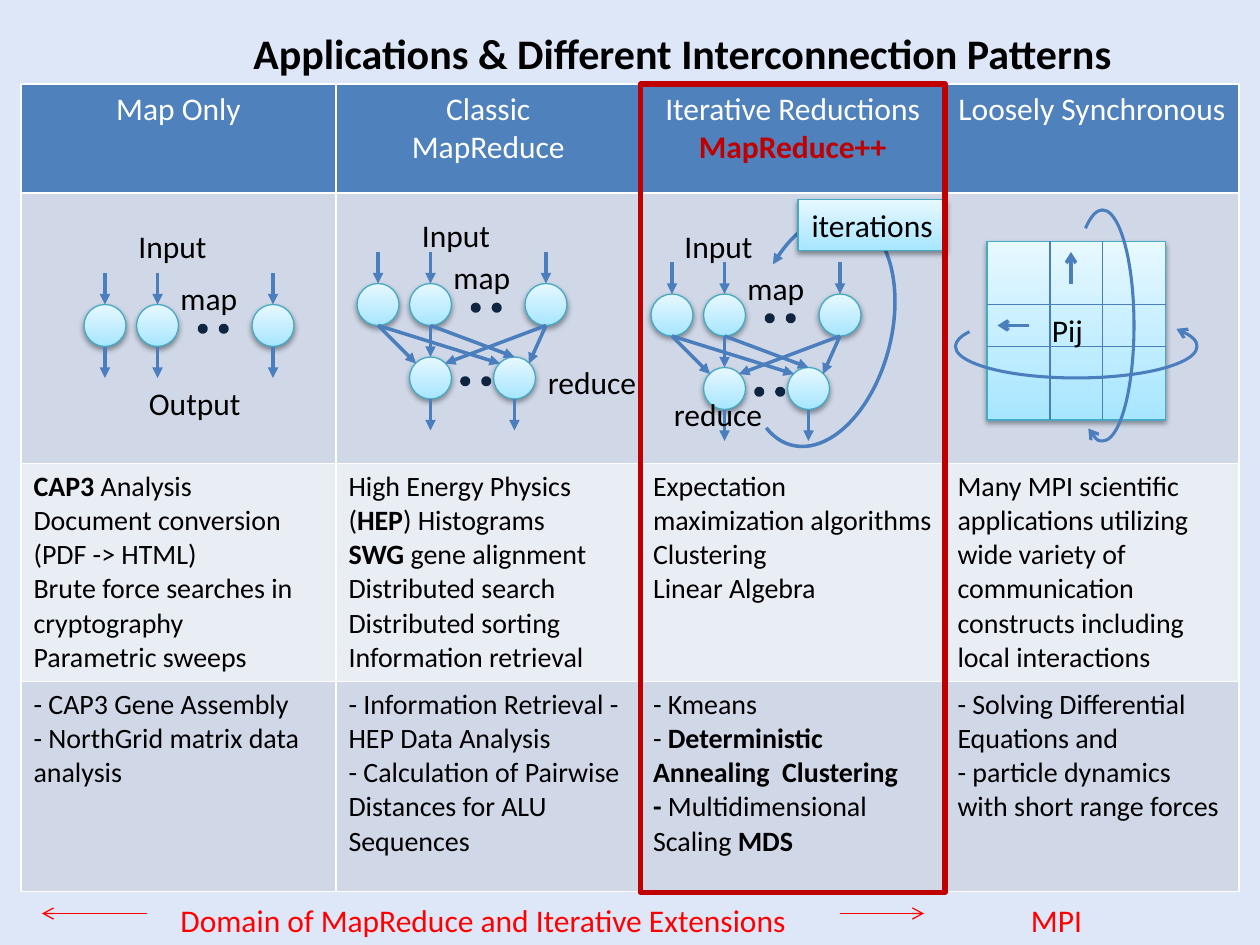
from dataclasses import dataclass
from typing import Any

from lxml import etree
from pptx import Presentation
from pptx.dml.color import RGBColor
from pptx.enum.shapes import MSO_CONNECTOR, MSO_SHAPE
from pptx.enum.text import MSO_ANCHOR, PP_ALIGN
from pptx.oxml.ns import qn
from pptx.util import Pt

PX = 9525  # EMU in one px, 96 px to the inch
ELLIPSE, RECT, ARC = MSO_SHAPE.OVAL, MSO_SHAPE.RECTANGLE, MSO_SHAPE.ARC
STRAIGHT = MSO_CONNECTOR.STRAIGHT
CENTER, MIDDLE = PP_ALIGN.CENTER, MSO_ANCHOR.MIDDLE
COLORS = {
    "background": "DEE7F8", "text": "000000", "header": "4F81BD", "header_text": "FFFFFF",
    "band": "D0D8E8", "band_light": "E9EDF4", "accent": "C00000", "domain": "FF0000",
    "arrow": "4B7EBC", "dot": "0F243E", "outline": "46AAC5",
    "glow_bottom": "A7E6FF", "glow_top": "E7F8FF",
}
LABEL_HEIGHT, NODE, DOT, ARROW = 39, 32, 5, 24
MAP_STEPS = (0, 40, 128)
REDUCE_STEPS = (40, 104)

COLUMN_WIDTHS = (240, 232, 232, 224)
ROW_HEIGHTS = (83, 206, 154, 160)
# Text between ** is bold; a leading bullet sign makes a dash bullet.
ROWS = (
    (["Map Only"], ["Classic", "MapReduce"],
     ["Iterative Reductions **MapReduce++**"], ["Loosely Synchronous"]),
    ([], [], [], []),
    (["**CAP3** Analysis", "Document conversion (PDF -> HTML)",
      "Brute force searches in cryptography", "Parametric sweeps"],
     ["High Energy Physics (**HEP**) Histograms", "**SWG** gene alignment",
      "Distributed search", "Distributed sorting", "Information retrieval"],
     ["Expectation maximization algorithms", "Clustering", "Linear Algebra"],
     ["Many MPI scientific applications utilizing wide variety of communication "
      "constructs including local interactions"]),
    (["- CAP3 Gene Assembly", "- NorthGrid matrix data analysis"],
     ["- Information Retrieval - HEP Data Analysis",
      "- Calculation of Pairwise Distances for ALU Sequences"],
     ["• Kmeans", "• **Deterministic Annealing  Clustering**",
      "**- **Multidimensional Scaling **MDS**"],
     ["- Solving Differential Equations and", "- particle dynamics with short range forces"]),
)
ROW_FILLS = ("header", "band", "band_light", "band")


@dataclass(frozen=True)
class Label:
    text: str
    left: int
    top: int
    width: int


@dataclass(frozen=True)
class MapDiagram:
    left: int
    top: int  # top of the map nodes
    labels: tuple[Label, ...]
    reduces: bool


@dataclass(frozen=True)
class Loop:
    box: tuple[int, int, int, int]
    angles: tuple[float, float]
    end: str
    head: str
    weight: float
    rotation: float = 0
    flipped: bool = False


MAP_ONLY = MapDiagram(64, 232, (Label("Input", 96, 168, 72), Label("map", 128, 208, 63),
                                Label("Output", 104, 288, 90)), False)
CLASSIC = MapDiagram(272, 216, (Label("Input", 312, 160, 72), Label("map", 336, 192, 63),
                                Label("reduce", 408, 272, 87)), True)
ITERATIVE = MapDiagram(496, 224, (Label("Input", 512, 168, 72), Label("map", 560, 200, 63),
                                  Label("reduce", 504, 296, 87)), True)
ITERATION_LOOP = Loop((572, 162, 107, 180), (131.85, 63.04), "headEnd", "triangle", 2, 14.3)
ROW_LOOP = Loop((728, 240, 184, 48), (103.27, 5.98), "tailEnd", "arrow", 1.75, 0, True)
COLUMN_LOOP = Loop((752, 224, 176, 48), (103.27, 5.98), "headEnd", "arrow", 1.75, 270, True)


def rgb(name: str) -> RGBColor:
    return RGBColor.from_string(COLORS[name])


def px(*lengths: int) -> list[int]:
    return [length * PX for length in lengths]


def style_run(run: Any, color: str = "text", size: int = 18, bold: bool = False) -> None:
    for key, value in {"name": "Calibri", "size": Pt(size), "bold": bold}.items():
        setattr(run.font, key, value)
    run.font.color.rgb = rgb(color)


def set_line(item: Any, color: str, weight: float) -> None:
    item.line.color.rgb = rgb(color)
    item.line.width = Pt(weight)


def add_head(item: Any, end: str, head: str) -> None:
    etree.SubElement(item._element.spPr.find(qn("a:ln")), qn(f"a:{end}"), type=head)


def write_label(box: Any, text: str, color: str = "text") -> None:
    box.text_frame.word_wrap = False
    run = box.text_frame.paragraphs[0].add_run()
    run.text = text
    style_run(run, color)


def add_label(shapes: Any, label: Label, color: str = "text") -> None:
    box = shapes.add_textbox(*px(label.left, label.top, label.width, LABEL_HEIGHT))
    write_label(box, label.text, color)


def add_line(shapes: Any, start: tuple[int, int], stop: tuple[int, int],
             head: str = "", color: str = "arrow", weight: float = 2) -> None:
    line = shapes.add_connector(STRAIGHT, *px(*start, *stop))
    set_line(line, color, weight)
    if head:
        add_head(line, "tailEnd", head)
    etree.SubElement(line._element.spPr, qn("a:effectLst"))


def add_glossy(shapes: Any, kind: Any, left: int, top: int, width: int, height: int) -> Any:
    """Add a light blue shape with a vertical gradient and a soft shadow."""
    shape = shapes.add_shape(kind, *px(left, top, width, height))
    shape.fill.gradient()
    shape.fill.gradient_angle = 90
    for stop, name, position in zip(shape.fill.gradient_stops, ("glow_bottom", "glow_top"), (0, 1)):
        stop.color.rgb = rgb(name)
        stop.position = position
    set_line(shape, "outline", 0.75)
    shape.shadow.inherit = False
    shadow = etree.SubElement(shape._element.spPr.find(qn("a:effectLst")), qn("a:outerShdw"),
                              blurRad="40000", dist="20000", dir="5400000", rotWithShape="0")
    tint = etree.SubElement(shadow, qn("a:srgbClr"), val=COLORS["text"])
    etree.SubElement(tint, qn("a:alpha"), val="38000")
    return shape


def add_dots(shapes: Any, left: int, top: int) -> None:
    for x in (left, left + 16):
        dot = shapes.add_shape(ELLIPSE, *px(x, top, DOT, DOT))
        dot.fill.solid()
        dot.fill.fore_color.rgb = rgb("dot")
        set_line(dot, "dot", 2)
        dot.shadow.inherit = False


def add_loop(shapes: Any, loop: Loop) -> None:
    arc = shapes.add_shape(ARC, *px(*loop.box))
    for index, angle in enumerate(loop.angles):
        arc.adjustments[index] = angle
    arc.rotation = loop.rotation
    if loop.flipped:
        arc._element.spPr.find(qn("a:xfrm")).set("flipV", "1")
    arc.fill.background()
    set_line(arc, "arrow", loop.weight)
    add_head(arc, loop.end, loop.head)
    arc.shadow.inherit = False


def add_map_diagram(slide: Any, diagram: MapDiagram) -> Any:
    shapes = slide.shapes.add_group_shape().shapes
    left, top = diagram.left, diagram.top
    bottom, reduce_top = top + NODE, top + 56

    def add_nodes(steps: tuple[int, ...], node_top: int) -> None:
        for step in steps:
            add_glossy(shapes, ELLIPSE, left + step, node_top, NODE, NODE)

    def add_arrows(steps: tuple[int, ...], y: int) -> None:
        for step in steps:
            x = left + step + NODE // 2
            add_line(shapes, (x, y), (x, y + ARROW), "triangle")

    add_nodes(MAP_STEPS, top)
    add_arrows(MAP_STEPS, top - ARROW)
    add_dots(shapes, left + 88, top + 16)
    if diagram.reduces:
        add_nodes(REDUCE_STEPS, reduce_top)
        for source, target, drop in ((0, 45, 29), (40, 56, 24), (128, 67, 29),
                                     (0, 109, 29), (40, 120, 24), (128, 131, 29)):
            add_line(shapes, (left + source + NODE // 2, bottom),
                     (left + target, bottom + drop), "triangle")
        add_arrows(REDUCE_STEPS, reduce_top + NODE)
        add_dots(shapes, left + 80, reduce_top + 16)
    else:
        add_arrows(MAP_STEPS, bottom)
    for label in diagram.labels:
        add_label(shapes, label)
    return shapes


def add_grid_diagram(slide: Any) -> None:
    shapes = slide.shapes.add_group_shape().shapes
    left, top, side = 752, 184, 136
    add_glossy(shapes, RECT, left, top, side, side)
    for x in (800, 840):
        add_line(shapes, (x, top), (x, top + side), weight=0.75)
    for y in (232, 264):
        add_line(shapes, (left, y), (left + side, y), weight=0.75)
    add_label(shapes, Label("Pij", 792, 232, 43))
    add_line(shapes, (816, 216), (816, 192), "arrow")
    add_line(shapes, (784, 248), (760, 248), "arrow")
    add_loop(shapes, ROW_LOOP)
    add_loop(shapes, COLUMN_LOOP)


def write_paragraph(paragraph: Any, markup: str, header: bool) -> None:
    if header:
        paragraph.alignment = CENTER
    if markup.startswith("•"):
        markup = markup[1:]
        properties = paragraph._p.get_or_add_pPr()
        etree.SubElement(properties, qn("a:buFont"), typeface="Calibri")
        etree.SubElement(properties, qn("a:buChar"), char="-")
    for index, part in enumerate(markup.split("**")):
        if part:
            run = paragraph.add_run()
            run.text = part
            bold = index % 2 == 1
            color = ("accent" if bold else "header_text") if header else "text"
            style_run(run, color, 18 if header else 16, bold)


def add_pattern_table(slide: Any) -> None:
    frame = slide.shapes.add_table(len(ROWS), len(COLUMN_WIDTHS),
                                   *px(16, 64, sum(COLUMN_WIDTHS), sum(ROW_HEIGHTS)))
    table = frame.table
    for column, width in zip(table.columns, COLUMN_WIDTHS):
        column.width = width * PX
    for r, (row, height) in enumerate(zip(table.rows, ROW_HEIGHTS)):
        row.height = height * PX
        for cell, lines in zip(row.cells, ROWS[r]):
            cell.fill.solid()
            cell.fill.fore_color.rgb = rgb(ROW_FILLS[r])
            text = cell.text_frame
            for n, markup in enumerate(lines):
                paragraph = text.add_paragraph() if n else text.paragraphs[0]
                write_paragraph(paragraph, markup, r == 0)


def add_title(slide: Any) -> None:
    title = slide.shapes.title
    for key, value in zip(("left", "top", "width", "height"), px(176, 0, 688, 80)):
        setattr(title, key, value)
    title.text_frame.vertical_anchor = MIDDLE
    paragraph = title.text_frame.paragraphs[0]
    paragraph.alignment = CENTER
    run = paragraph.add_run()
    run.text = "Applications & Different Interconnection Patterns"
    style_run(run, size=24, bold=True)


def add_domain_footer(slide: Any) -> None:
    for label in (Label("Domain of MapReduce and Iterative Extensions", 128, 682, 487),
                  Label("MPI", 776, 682, 59)):
        add_label(slide.shapes, label, "domain")
    for start, stop in ((640, 704), (112, 32)):
        add_line(slide.shapes, (start, 696), (stop, 696), "arrow", "domain", 0.75)


def add_highlight(slide: Any) -> None:
    frame = slide.shapes.add_shape(RECT, *px(488, 64, 232, 616))
    frame.fill.background()
    set_line(frame, "accent", 3)
    frame.shadow.inherit = False


def main() -> None:
    deck = Presentation()
    deck.slide_width, deck.slide_height = px(960, 720)
    slide = deck.slides.add_slide(deck.slide_layouts[5])
    slide.background.fill.solid()
    slide.background.fill.fore_color.rgb = rgb("background")
    add_title(slide)
    add_pattern_table(slide)
    add_map_diagram(slide, MAP_ONLY)
    add_map_diagram(slide, CLASSIC)
    add_loop(slide.shapes, ITERATION_LOOP)
    iterative_shapes = add_map_diagram(slide, ITERATIVE)
    write_label(add_glossy(iterative_shapes, RECT, 608, 152, 113, LABEL_HEIGHT), "iterations")
    add_grid_diagram(slide)
    add_domain_footer(slide)
    add_highlight(slide)
    deck.save("out.pptx")


if __name__ == "__main__":
    main()
